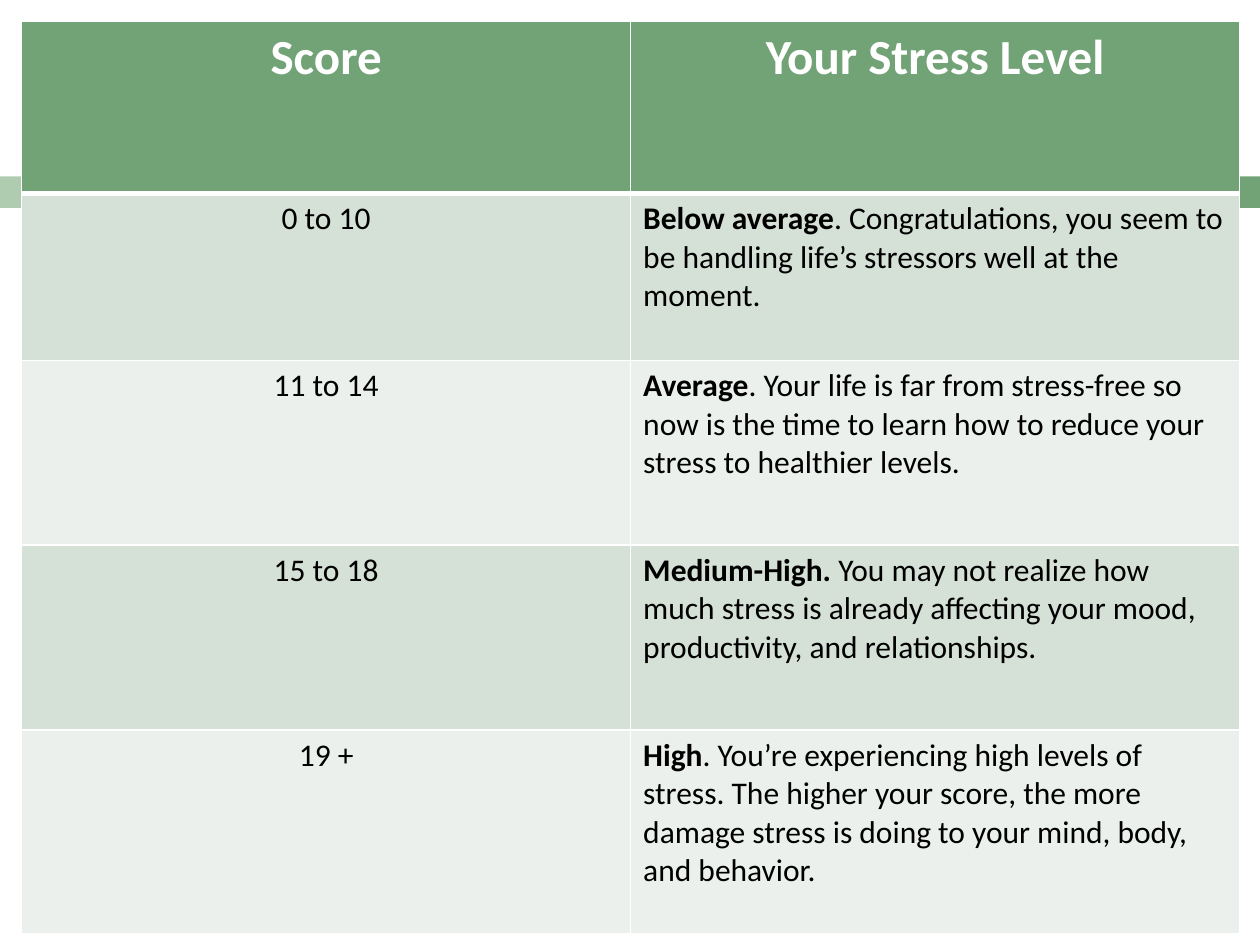
"""Build a one-slide table that explains stress scores."""
from typing import NamedTuple

from lxml.etree import SubElement
from pptx import Presentation
from pptx.dml.color import RGBColor
from pptx.enum.shapes import MSO_SHAPE
from pptx.enum.text import PP_ALIGN
from pptx.oxml.ns import qn
from pptx.util import Pt

COLORS = {
    "green": "72A376",
    "pale_green": "B0CCB0",
    "dark_band": "D5E0D6",
    "light_band": "EBF0EC",
    "white": "FFFFFF",
    "black": "000000",
}
HEADER_FORMAT = {"name": "Calibri", "size": Pt(28), "bold": True}
BODY_FORMAT = {"name": "Calibri", "size": Pt(18), "bold": False}
LEVEL_FORMAT = BODY_FORMAT | {"bold": True}
COLUMN_WIDTH = 348
HEADER_HEIGHT = 98.3


class Bar(NamedTuple):
    left: float
    width: float
    color: str


class Level(NamedTuple):
    score: str
    name: str
    advice: str
    height: float


class Span(NamedTuple):
    text: str
    format: dict
    color: str = "black"


BARS = [Bar(0, 42, "pale_green"), Bar(46.8, 673.2, "green")]
HEADINGS = ["Score", "Your Stress Level"]
LEVELS = [
    Level("0 to 10", "Below average",
          ". Congratulations, you seem to be handling life’s stressors well at the moment.", 95.3),
    Level("11 to 14", "Average",
          ". Your life is far from stress-free so now is the time to learn how to reduce "
          "your stress to healthier levels.", 105.6),
    Level("15 to 18", "Medium-High. ",
          "You may not realize how much stress is already affecting your mood, "
          "productivity, and relationships.", 105.6),
    Level("19 +", "High",
          ". You’re experiencing high levels of stress. The higher your score, the more "
          "damage stress is doing to your mind, body, and behavior.", 116.6),
]


def rgb(color: str) -> RGBColor:
    return RGBColor.from_string(COLORS[color])


def draw_bar(page, bar: Bar) -> None:
    shape = page.shapes.add_shape(
        MSO_SHAPE.RECTANGLE, Pt(bar.left), Pt(100.8), Pt(bar.width), Pt(18))
    shape.shadow.inherit = False
    shape.fill.solid()
    shape.fill.fore_color.rgb = rgb(bar.color)
    shape.line.fill.background()


def add_borders(cell, widths: dict[str, float]) -> None:
    properties = cell._tc.get_or_add_tcPr()
    for index, (side, width) in enumerate(widths.items()):
        line = SubElement(properties, qn(f"a:{side}"), w=str(Pt(width)))
        fill = SubElement(line, qn("a:solidFill"))
        SubElement(fill, qn("a:srgbClr"), val=COLORS["white"])
        properties.insert(index, line)


def fill_cell(cell, spans: list[Span], color: str, alignment: PP_ALIGN,
              top: float = 1, bottom: float = 1) -> None:
    cell.fill.solid()
    cell.fill.fore_color.rgb = rgb(color)
    add_borders(cell, {"lnL": 1, "lnR": 1, "lnT": top, "lnB": bottom})
    paragraph = cell.text_frame.paragraphs[0]
    paragraph.alignment = alignment
    for span in spans:
        run = paragraph.add_run()
        run.text = span.text
        for attribute, value in span.format.items():
            setattr(run.font, attribute, value)
        run.font.color.rgb = rgb(span.color)


def draw_table(page, levels: list[Level]) -> None:
    heights = [HEADER_HEIGHT] + [level.height for level in levels]
    table = page.shapes.add_table(
        len(heights), len(HEADINGS), Pt(12.4), Pt(12.4),
        Pt(COLUMN_WIDTH * len(HEADINGS)), Pt(sum(heights))).table
    for column in table.columns:
        column.width = Pt(COLUMN_WIDTH)
    for row, height in zip(table.rows, heights):
        row.height = Pt(height)
    for column, heading in enumerate(HEADINGS):
        fill_cell(table.cell(0, column), [Span(heading, HEADER_FORMAT, "white")],
                  "green", PP_ALIGN.CENTER, bottom=3)
    for row, level in enumerate(levels, start=1):
        band = "dark_band" if row % 2 else "light_band"
        top = 3 if row == 1 else 1
        fill_cell(table.cell(row, 0), [Span(level.score, BODY_FORMAT)],
                  band, PP_ALIGN.CENTER, top=top)
        fill_cell(table.cell(row, 1),
                  [Span(level.name, LEVEL_FORMAT), Span(level.advice, BODY_FORMAT)],
                  band, PP_ALIGN.LEFT, top=top)


def main() -> None:
    deck = Presentation()
    deck.slide_width, deck.slide_height = Pt(720), Pt(540)
    page = deck.slides.add_slide(deck.slide_layouts[6])
    for bar in BARS:
        draw_bar(page, bar)
    draw_table(page, LEVELS)
    deck.save("out.pptx")


if __name__ == "__main__":
    main()
